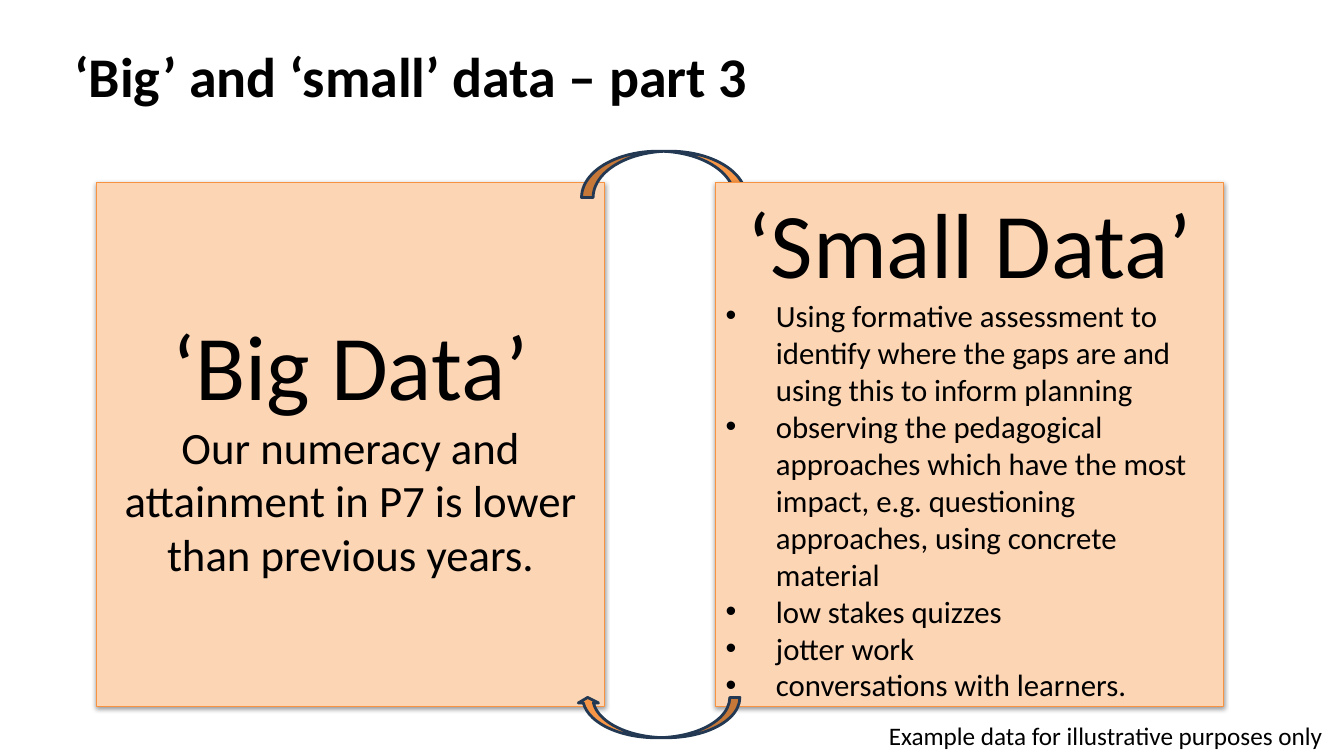
from lxml import etree
from pptx import Presentation
from pptx.dml import color
from pptx.enum import shapes, text
from pptx.oxml import ns
from pptx.util import Pt

FONT = "Calibri"
BLACK, PEACH, ORANGE, EDGE, NAVY = "000000", "FCD5B5", "F79646", "F69240", "233953"
CARD_TOP, CARD_WIDTH, CARD_HEIGHT = 130.3, 363, 374.4
SMALL_DATA_POINTS = [
    "Using formative assessment to identify where the gaps are and using this to inform planning",
    "observing the pedagogical approaches which have the most impact, "
    "e.g. questioning approaches, using concrete material",
    "low stakes quizzes",
    "jotter work",
    "conversations with learners.",
]


def rgb(value):
    return color.RGBColor.from_string(value)


def add_xml(parent, tag, **attributes):
    return etree.SubElement(parent, ns.qn(tag), attributes)


def add_para(box, words, size, bold=False, align=text.PP_ALIGN.LEFT, bullet=False):
    """Write one paragraph, using the empty first one when it is free."""
    frame = box.text_frame
    para = frame.paragraphs[0]
    if para.runs:
        para = frame.add_paragraph()
    para.alignment = align
    if bullet:
        props = para._p.get_or_add_pPr()
        props.set("marL", str(Pt(36)))
        props.set("indent", str(-Pt(36)))
        add_xml(props, "a:buFont", typeface="Arial")
        add_xml(props, "a:buChar", char="•")
    span = para.add_run()
    span.text = words
    span.font.name = FONT
    span.font.size = Pt(size)
    span.font.bold = bold
    span.font.color.rgb = rgb(BLACK)


def add_label(page, left, top, width, height, words, size, bold=False, wrap=True):
    box = page.shapes.add_textbox(Pt(left), Pt(top), Pt(width), Pt(height))
    box.text_frame.word_wrap = wrap
    box.text_frame.vertical_anchor = text.MSO_ANCHOR.MIDDLE
    add_para(box, words, size, bold)
    return box


def add_filled(page, kind, left, top, width, height, fill, line, weight):
    shape = page.shapes.add_shape(kind, Pt(left), Pt(top), Pt(width), Pt(height))
    shape.shadow.inherit = False
    shape.fill.solid()
    shape.fill.fore_color.rgb = rgb(fill)
    shape.line.color.rgb = rgb(line)
    shape.line.width = Pt(weight)
    return shape


def add_card(page, left, heading):
    card = add_filled(page, shapes.MSO_SHAPE.RECTANGLE, left, CARD_TOP,
                      CARD_WIDTH, CARD_HEIGHT, PEACH, EDGE, 0.75)
    # Soft shadow straight below the card
    effects = card._element.spPr.find(ns.qn("a:effectLst"))
    shadow = add_xml(effects, "a:outerShdw", blurRad=str(Pt(3.1)), dist=str(Pt(1.6)),
                     dir="5400000", rotWithShape="0")
    tint = add_xml(shadow, "a:srgbClr", val=BLACK)
    add_xml(tint, "a:alpha", val="38000")
    card.text_frame.word_wrap = True
    card.text_frame.vertical_anchor = text.MSO_ANCHOR.MIDDLE
    add_para(card, heading, 66, align=text.PP_ALIGN.CENTER)
    return card


def add_arrow(page, kind, left, top, width, height):
    return add_filled(page, kind, left, top, width, height, ORANGE, NAVY, 2)


def main():
    deck = Presentation()
    deck.slide_width, deck.slide_height = Pt(960), Pt(540)
    page = deck.slides.add_slide(deck.slide_layouts[6])

    # Title
    add_label(page, 46, 34.5, 595, 39, "‘Big’ and ‘small’ data – part 3", 40, bold=True)

    # Big data card, with the arrow leading away from it
    big = add_card(page, 69, "‘Big Data’")
    add_para(big, "Our numeracy and attainment in P7 is lower than previous years.",
             32, align=text.PP_ALIGN.CENTER)
    add_arrow(page, shapes.MSO_SHAPE.CURVED_DOWN_ARROW, 415.4, 108, 121.7, 33.1)

    # Small data card, with the arrow leading back
    small = add_card(page, 511.2, "‘Small Data’")
    for point in SMALL_DATA_POINTS:
        add_para(small, point, 22, bullet=True)
    back = add_arrow(page, shapes.MSO_SHAPE.CURVED_UP_ARROW, 412.6, 498.2, 115.9, 28.8)
    back._element.spPr.xfrm.set("flipH", "1")
    for index, value in enumerate((0.25, 0.5, 0.137)):
        back.adjustments[index] = value

    # Footnote
    note = add_label(page, 627.8, 511.2, 332, 28.8,
                     "Example data for illustrative purposes only", 18, wrap=False)
    note.text_frame.auto_size = text.MSO_AUTO_SIZE.SHAPE_TO_FIT_TEXT

    deck.save("out.pptx")


if __name__ == "__main__":
    main()
